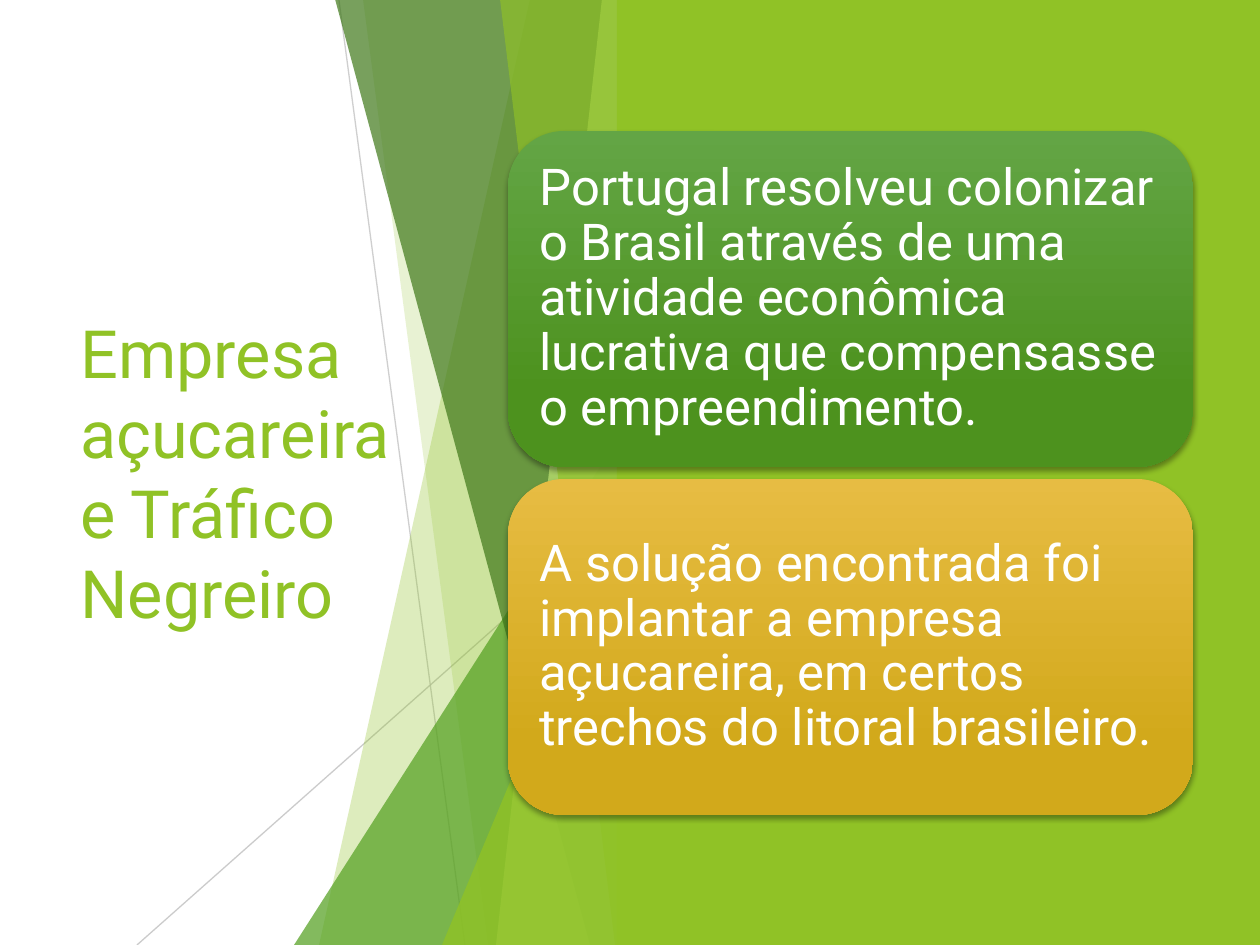
from pptx import Presentation
from pptx.dml.color import RGBColor
from pptx.enum.shapes import MSO_CONNECTOR, MSO_SHAPE as SHAPE
from pptx.enum.text import MSO_ANCHOR, PP_ALIGN
from pptx.oxml import parse_xml
from pptx.oxml.ns import nsdecls, qn
from pptx.util import Pt
from lxml.etree import SubElement

PX = 914400 / 126
W, H = 1260, 945
FONT = "Roboto"

WHITE = RGBColor(0xFF, 0xFF, 0xFF)
GRAY = RGBColor(0xBF, 0xBF, 0xBF)
LIME = RGBColor(0x90, 0xC2, 0x26)
PALE_LIME = RGBColor(0xC0, 0xE4, 0x74)
GREEN = RGBColor(0x54, 0xA0, 0x21)
DARK_GREEN = RGBColor(0x3F, 0x78, 0x19)
CARD_GREEN = RGBColor(0x63, 0xA5, 0x45), RGBColor(0x4D, 0x92, 0x1E)
CARD_GOLD = RGBColor(0xE7, 0xBC, 0x43), RGBColor(0xD2, 0xA9, 0x1B)

TITLE = "Empresa açucareira e Tráfico Negreiro"
CARDS = [
    ("Portugal resolveu colonizar o Brasil através de uma atividade econômica "
     "lucrativa que compensasse o empreendimento.", CARD_GREEN),
    ("A solução encontrada foi implantar a empresa açucareira, em certos "
     "trechos do litoral brasileiro.", CARD_GOLD),
]
CARD_LEFT, CARD_TOP, CARD_W, CARD_H, CARD_STEP = 508, 131, 685, 336, 348

LINES = [((339, 0), (465, H), 75), ((630, 508), (137, H), 80)]
FACET_RIGHT = 630
FACETS = [
    ("band", 530, 319, LIME, 30),
    ("band", 363, 488, LIME, 20),
    ("triangle", 294, 420, GREEN, 72),
    ("band", 335, 590, DARK_GREEN, 70),
    ("band", 602, 496, PALE_LIME, 70),
    ("band", 500, 615, LIME, 65),
    ("triangle", 442, 495, LIME, 80),
]


def px(*values):
    return [round(v * PX) for v in values]


def set_alpha(fill_parent, percent):
    color = fill_parent.find(".//" + qn("a:srgbClr"))
    SubElement(color, qn("a:alpha")).set("val", str(percent * 1000))


def paint(s, color, alpha=100):
    s.shadow.inherit = False
    s.fill.solid()
    s.fill.fore_color.rgb = color
    s.line.fill.background()
    if alpha < 100:
        set_alpha(s._element.spPr, alpha)


def write(tf, text, size, color):
    tf.word_wrap = True
    tf.vertical_anchor = MSO_ANCHOR.MIDDLE
    tf.text = text
    p = tf.paragraphs[0]
    p.alignment = PP_ALIGN.LEFT
    font = p.runs[0].font
    font.name, font.size, font.color.rgb = FONT, Pt(size), color
    return p


def add_line(shapes, start, end, alpha):
    s = shapes.add_connector(MSO_CONNECTOR.STRAIGHT, *px(*start, *end))
    s.line.color.rgb = GRAY
    s.line.width = Pt(0.75)
    set_alpha(s._element.spPr, alpha)
    SubElement(s._element.spPr, qn("a:effectLst"))


def add_band(shapes, top_x, bottom_x):
    builder = shapes.build_freeform(top_x, -1, scale=PX)
    builder.add_line_segments([(FACET_RIGHT, -1), (FACET_RIGHT, H), (bottom_x, H)])
    return builder.convert_to_shape()


def add_triangle(shapes, left, top):
    s = shapes.add_shape(SHAPE.ISOSCELES_TRIANGLE,
                         *px(left, top, FACET_RIGHT - left, H - top))
    s.adjustments[0] = 1
    return s


def add_card(shapes, top, text, colors):
    s = shapes.add_shape(SHAPE.ROUNDED_RECTANGLE, *px(CARD_LEFT, top, CARD_W, CARD_H))
    s.line.fill.background()
    s.fill.gradient()
    s.fill.gradient_angle = 270
    for stop, position, color in zip(s.fill.gradient_stops, (0, 0.78), colors):
        stop.position = position
        stop.color.rgb = color
    s._element.spPr.append(parse_xml(
        f'<a:effectLst {nsdecls("a")}><a:outerShdw blurRad="{Pt(3)}" dist="{Pt(2)}" '
        'dir="5400000" rotWithShape="0"><a:srgbClr val="000000">'
        '<a:alpha val="35000"/></a:srgbClr></a:outerShdw></a:effectLst>'))
    tf = s.text_frame
    tf.margin_left, tf.margin_top, tf.margin_right, tf.margin_bottom = px(15, 15, 15, 15)
    write(tf, text, 29, WHITE).line_spacing = 0.9


def main():
    prs = Presentation()
    prs.slide_width, prs.slide_height = px(W, H)
    slide = prs.slides.add_slide(prs.slide_layouts[6])
    shapes = slide.shapes

    paint(shapes.add_shape(SHAPE.RECTANGLE, *px(0, 0, W, H)), WHITE)
    title = shapes.add_textbox(*px(68, 190, 367, 564))
    write(title.text_frame, TITLE, 38, LIME)

    for start, end, alpha in LINES:
        add_line(shapes, start, end, alpha)
    makers = {"band": add_band, "triangle": add_triangle}
    for kind, a, b, color, alpha in FACETS:
        paint(makers[kind](shapes, a, b), color, alpha)
    paint(shapes.add_shape(SHAPE.RECTANGLE, *px(617, 0, W - 617, H)), LIME)

    for i, (text, colors) in enumerate(CARDS):
        add_card(shapes, CARD_TOP + i * CARD_STEP, text, colors)

    prs.save("out.pptx")


if __name__ == "__main__":
    main()
